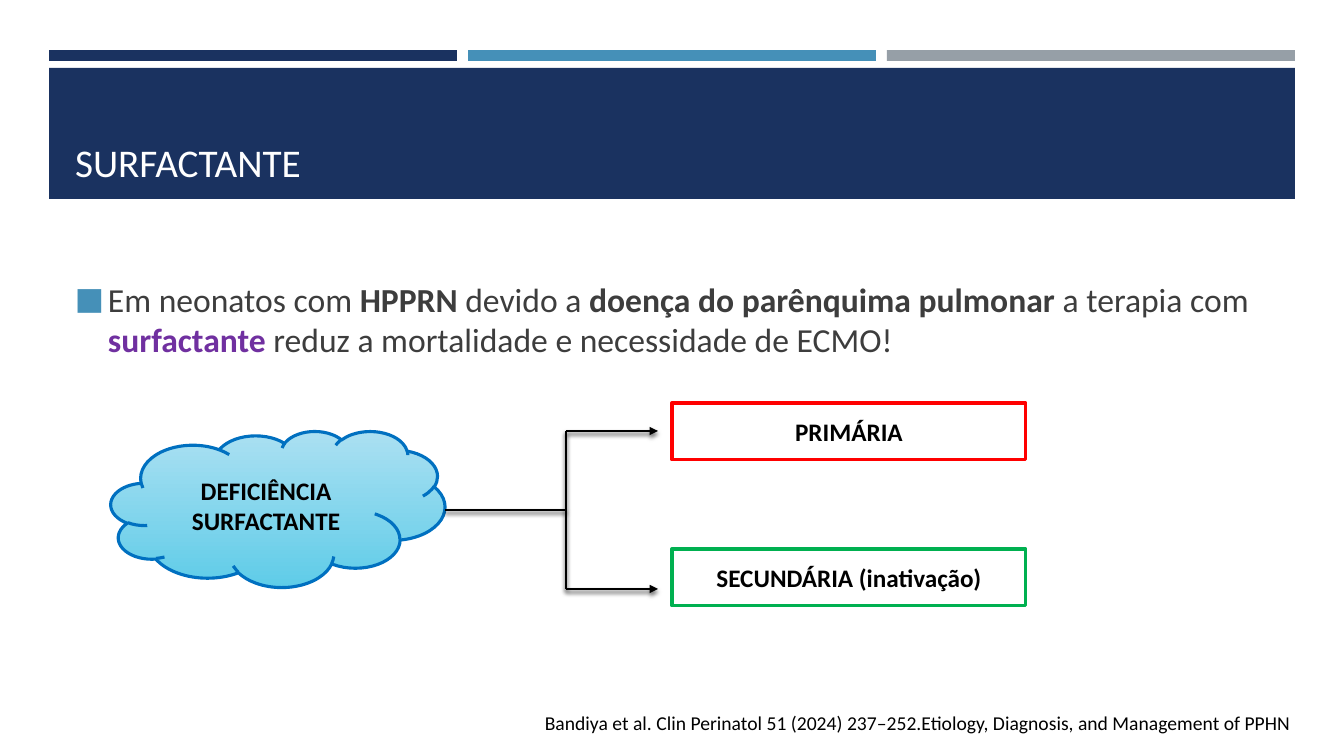
from lxml import etree
from pptx import Presentation
from pptx.dml.color import RGBColor
from pptx.enum.shapes import MSO_CONNECTOR, MSO_SHAPE
from pptx.enum.text import MSO_ANCHOR, MSO_AUTO_SIZE, PP_ALIGN
from pptx.oxml import parse_xml
from pptx.oxml.ns import nsdecls, qn
from pptx.util import Emu, Pt

RECT, CLOUD = MSO_SHAPE.RECTANGLE, MSO_SHAPE.CLOUD
STRAIGHT = MSO_CONNECTOR.STRAIGHT
LEFT, CENTER, RIGHT = PP_ALIGN.LEFT, PP_ALIGN.CENTER, PP_ALIGN.RIGHT
TOP, MIDDLE, BOTTOM = MSO_ANCHOR.TOP, MSO_ANCHOR.MIDDLE, MSO_ANCHOR.BOTTOM
PX_PER_INCH = 100.8
TITLE_ONLY = 5

COLORS = {
    "navy": "1A3260", "blue": "4590B8", "gray": "969FA7",
    "white": "FFFFFF", "black": "000000", "text": "3D3D3D",
    "purple": "7030A0", "red": "FF0000", "green": "00B050",
    "outline": "0070C0", "sky_light": "ABE0F2", "sky": "5FCCE8",
}


def px(n):
    return Emu(round(n * 914400 / PX_PER_INCH))


def rgb(name):
    return RGBColor.from_string(COLORS[name])


class SlideBuilder:
    font = "Calibri"

    def __init__(self, s):
        self.s = s

    def fill_text(self, tf, runs, size, align=LEFT, anchor=TOP, bullet=False):
        """Fill a text frame with (text, colour, bold) runs."""
        frame = {"word_wrap": True, "auto_size": MSO_AUTO_SIZE.NONE,
                 "vertical_anchor": anchor}
        for name, value in frame.items():
            setattr(tf, name, value)
        p = tf.paragraphs[0]
        if bullet:
            self.add_bullet(p)
        p.alignment = align
        for text, color, bold in runs:
            r = p.add_run()
            r.text = text
            style = {"name": self.font, "size": Pt(size), "bold": bold}
            for name, value in style.items():
                setattr(r.font, name, value)
            r.font.color.rgb = rgb(color)

    def add_bullet(self, p):
        pPr = p._p.get_or_add_pPr()
        pPr.set("marL", str(px(33)))
        pPr.set("indent", str(-px(33)))
        color = etree.SubElement(pPr, qn("a:buClr"))
        etree.SubElement(color, qn("a:srgbClr"), val=COLORS["blue"])
        etree.SubElement(pPr, qn("a:buSzPct"), val="92000")
        etree.SubElement(pPr, qn("a:buFont"), typeface=self.font)
        etree.SubElement(pPr, qn("a:buChar"), char="■")

    def title(self, box, text, size):
        sp = self.s.shapes.title
        for name, n in zip(("left", "top", "width", "height"), box):
            setattr(sp, name, px(n))
        self.fill_text(sp.text_frame, [(text, "white", False)], size,
                       anchor=BOTTOM)
        # Bring the title in front of the banner
        sp.element.getparent().append(sp.element)

    def text(self, box, runs, size, **layout):
        sp = self.s.shapes.add_textbox(*map(px, box))
        self.fill_text(sp.text_frame, runs, size, **layout)

    def shape(self, kind, box, fill, line=None, label=None):
        sp = self.s.shapes.add_shape(kind, *map(px, box))
        sp.shadow.inherit = False
        if isinstance(fill, tuple):
            sp.fill.gradient()
            sp.fill.gradient_angle = 270
            for stop, color in zip(sp.fill.gradient_stops, fill):
                stop.color.rgb = rgb(color)
        else:
            sp.fill.solid()
            sp.fill.fore_color.rgb = rgb(fill)
        if line:
            sp.line.color.rgb = rgb(line)
            sp.line.width = Pt(2.25)
        else:
            sp.line.fill.background()
        if label:
            self.fill_text(sp.text_frame, [(label, "black", True)], 18,
                           align=CENTER, anchor=MIDDLE)

    def line(self, start, end, arrow=False):
        cx = self.s.shapes.add_connector(STRAIGHT, *map(px, start + end))
        cx.line.color.rgb = rgb("black")
        cx.line.width = Pt(2)
        spPr = cx.element.spPr
        if arrow:
            etree.SubElement(spPr.find(qn("a:ln")), qn("a:tailEnd"),
                             type="triangle")
        spPr.append(parse_xml(
            f'<a:effectLst {nsdecls("a")}>'
            f'<a:outerShdw blurRad="{Pt(3)}" dist="{Pt(2)}" dir="5400000" '
            'rotWithShape="0"><a:srgbClr val="000000"><a:alpha val="55000"/>'
            '</a:srgbClr></a:outerShdw></a:effectLst>'))


def main():
    prs = Presentation()
    prs.slide_width, prs.slide_height = px(1344), px(756)
    b = SlideBuilder(prs.slides.add_slide(prs.slide_layouts[TITLE_ONLY]))

    # Header bars, banner and title
    for i, color in enumerate(("navy", "blue", "gray")):
        b.shape(RECT, (49 + 419 * i, 50, 408, 11), color)
    b.shape(RECT, (49, 68, 1246, 131), "navy")
    b.title((65, 78, 1216, 112), "SURFACTANTE", 28)

    # Main statement
    b.text((65, 274, 1216, 92), [
        ("Em neonatos com ", "text", False),
        ("HPPRN ", "text", True),
        ("devido a ", "text", False),
        ("doença do parênquima pulmonar ", "text", True),
        ("a terapia com ", "text", False),
        ("surfactante ", "purple", True),
        ("reduz a mortalidade e necessidade de ECMO!", "text", False),
    ], 24, bullet=True)

    # Citation
    b.text((500, 706, 801, 34), [
        ("Bandiya et al. Clin Perinatol 51 (2024) 237–252."
         "Etiology, Diagnosis, and Management of PPHN", "black", False),
    ], 14, align=RIGHT)

    # Cause and its trunk line
    b.shape(CLOUD, (111, 431, 334, 156), ("sky_light", "sky"), "outline",
            "DEFICIÊNCIA SURFACTANTE")
    fork_x, fork_y = 566, 510
    b.line((445, fork_y), (fork_x, fork_y))

    # Branches to the two types
    for y, box_top, color, label in (
            (431, 403, "red", "PRIMÁRIA"),
            (589, 549, "green", "SECUNDÁRIA (inativação)")):
        b.line((fork_x, fork_y), (fork_x, y))
        b.line((fork_x, y), (658, y), arrow=True)
        b.shape(RECT, (672, box_top, 354, 57), "white", color, label)

    prs.save("out.pptx")


if __name__ == "__main__":
    main()
